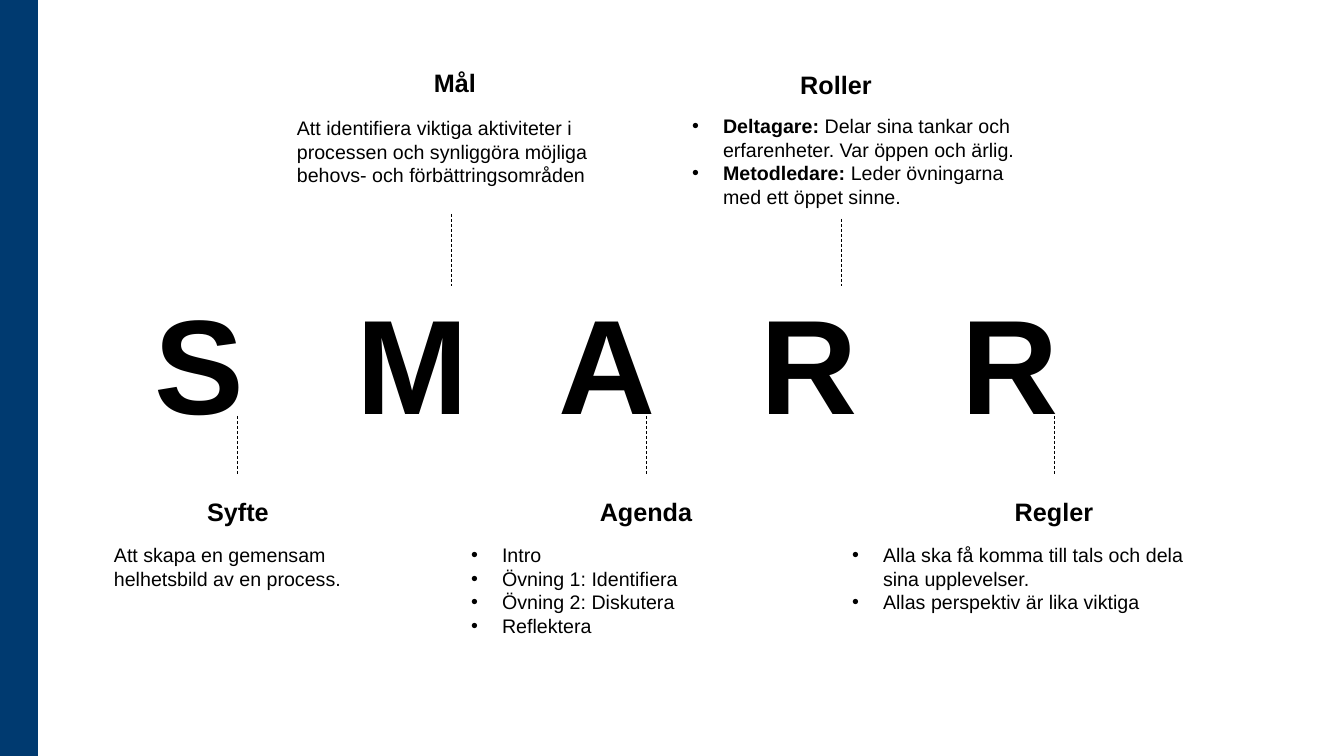
from lxml import etree
from pptx import Presentation
from pptx.dml.color import RGBColor
from pptx.enum.dml import MSO_LINE
from pptx.enum.shapes import MSO_CONNECTOR, MSO_SHAPE
from pptx.enum.text import MSO_ANCHOR, MSO_AUTO_SIZE, PP_ALIGN
from pptx.oxml.ns import qn
from pptx.util import Pt

SCALE = 914400 / 100.8
WIDE, HIGH = 1344, 756
COLORS = {"ink": "000000", "bar": "003A70"}
FONT = "Arial"
DASH = MSO_LINE.DASH
LINE = MSO_CONNECTOR.STRAIGHT
RECT = MSO_SHAPE.RECTANGLE
TOP = MSO_ANCHOR.TOP
FIXED = MSO_AUTO_SIZE.NONE
LEFT, CENTER = PP_ALIGN.LEFT, PP_ALIGN.CENTER
PITCH = 202
INDENT = 31

WORD = "SMARR"
PARTS = [
    ("Syfte", (122, 491, 232, 40), (104, 538, 325, 57), (237, 416, 474), False,
     [[("Att skapa en gemensam helhetsbild av en process.", False)]]),
    ("Mål", (341, 62, 228, 40), (287, 111, 350, 82), (451, 214, 286), False,
     [[("Att identifiera viktiga aktiviteter i processen och synliggöra "
        "möjliga behovs- och förbättringsområden", False)]]),
    ("Agenda", (530, 491, 232, 40), (461, 538, 388, 105), (646, 416, 474), True,
     [[("Intro", False)], [("Övning 1: Identifiera", False)],
      [("Övning 2: Diskutera", False)], [("Reflektera", False)]]),
    ("Roller", (649, 64, 374, 40), (682, 109, 374, 152), (841, 219, 286), True,
     [[("Deltagare: ", True),
       ("Delar sina tankar och erfarenheter. Var öppen och ärlig.", False)],
      [("Metodledare: ", True), ("Leder övningarna med ett öppet sinne.", False)]]),
    ("Regler", (927, 491, 254, 40), (842, 538, 434, 82), (1054, 416, 474), True,
     [[("Alla ska få komma till tals och dela \nsina upplevelser.", False)],
      [("Allas perspektiv är lika viktiga", False)]]),
]


def emu(px):
    return round(px * SCALE)


def color(name):
    return RGBColor.from_string(COLORS[name])


def place(shape, box):
    shape.left, shape.top, shape.width, shape.height = map(emu, box)
    frame = shape.text_frame
    frame.auto_size = FIXED
    frame.word_wrap = True
    frame.vertical_anchor = TOP
    return frame


def add_run(para, text, size, bold):
    for i, line in enumerate(text.split("\n")):
        if i:
            para.add_line_break()
        run = para.add_run()
        run.text = line
        font = run.font
        font.name, font.size, font.bold = FONT, Pt(size), bold
        font.color.rgb = color("ink")


def set_bullet(para):
    props = para._p.get_or_add_pPr()
    props.set("marL", str(emu(INDENT)))
    props.set("indent", str(-emu(INDENT)))
    etree.SubElement(props, qn("a:buFont")).set("typeface", FONT)
    etree.SubElement(props, qn("a:buChar")).set("char", "•")


def fill_text(frame, paras, size, align=LEFT, bullet=False):
    for i, runs in enumerate(paras):
        para = frame.add_paragraph() if i else frame.paragraphs[0]
        para.alignment = align
        para.space_before = Pt(0)
        if bullet:
            set_bullet(para)
        for text, bold in runs:
            add_run(para, text, size, bold)


def add_bar(slide, box):
    bar = slide.shapes.add_shape(RECT, *map(emu, box))
    bar.shadow.inherit = False
    bar.fill.solid()
    bar.fill.fore_color.rgb = color("bar")
    bar.line.fill.background()


def add_word(slide, box):
    frame = place(slide.shapes.title, box)
    frame.margin_left = frame.margin_right = 0
    frame.margin_top = frame.margin_bottom = 0
    para = frame.paragraphs[0]
    tabs = etree.SubElement(para._p.get_or_add_pPr(), qn("a:tabLst"))
    for i in range(1, len(WORD)):
        tab = etree.SubElement(tabs, qn("a:tab"))
        tab.set("pos", str(emu(i * PITCH)))
        tab.set("algn", "l")
    fill_text(frame, [[("\t".join(WORD), True)]], 96)


def add_stem(slide, x, top, end):
    stem = slide.shapes.add_connector(LINE, *map(emu, (x, top, x, end)))
    stem.line.color.rgb = color("ink")
    stem.line.width = Pt(0.5)
    stem.line.dash_style = DASH
    etree.SubElement(stem._element.spPr, qn("a:effectLst"))


def add_part(slide, part, slots):
    head, head_box, note_box, stem, bullet, paras = part
    label = slide.shapes.add_textbox(0, 0, 0, 0)
    fill_text(place(label, head_box), [[(head, True)]], 18, CENTER)
    note = slots.pop(0) if bullet else slide.shapes.add_textbox(0, 0, 0, 0)
    fill_text(place(note, note_box), paras, 14, bullet=bullet)
    add_stem(slide, *stem)


def main():
    deck = Presentation()
    deck.slide_width, deck.slide_height = emu(WIDE), emu(HIGH)
    slide = deck.slides.add_slide(deck.slide_layouts[4])
    slots = [slide.placeholders[i] for i in (2, 4, 1, 3)]
    add_bar(slide, (0, 0, 38, HIGH))
    add_word(slide, (154, 280, 1000, 155))
    for part in PARTS:
        add_part(slide, part, slots)
    for slot in slots:
        slot._element.getparent().remove(slot._element)
    deck.save("out.pptx")


if __name__ == "__main__":
    main()
